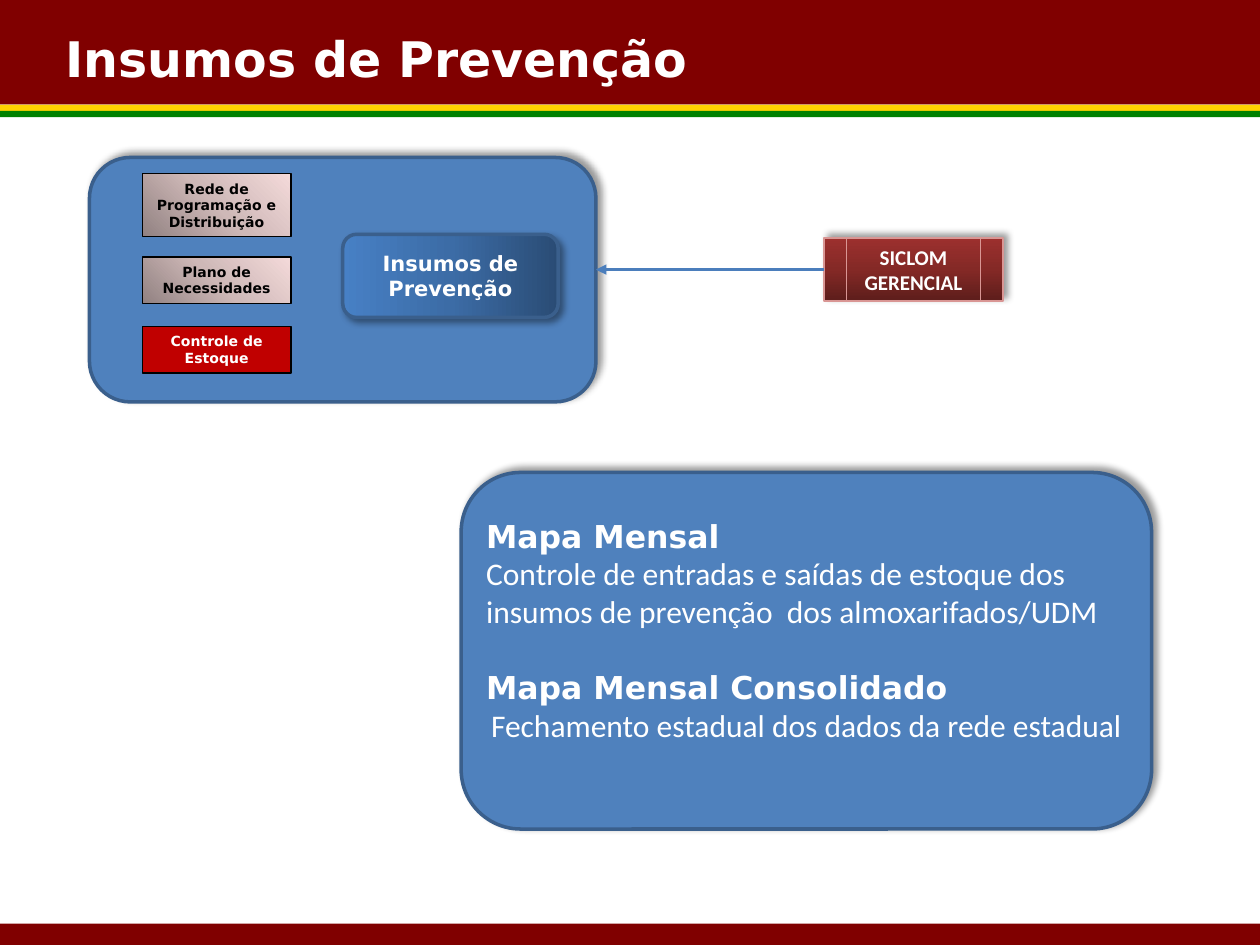
from dataclasses import dataclass

from lxml.etree import SubElement
from pptx import Presentation
from pptx.dml.color import RGBColor
from pptx.enum.shapes import MSO_CONNECTOR, MSO_SHAPE
from pptx.enum.text import MSO_ANCHOR, MSO_AUTO_SIZE, PP_ALIGN
from pptx.oxml.ns import qn
from pptx.util import Inches, Pt


@dataclass(frozen=True)
class Theme:
    maroon: str = "800000"
    yellow: str = "FFD200"
    green: str = "008000"
    blue: str = "4F81BD"
    blue_edge: str = "3A5F8C"
    arrow: str = "4B7EBC"
    red: str = "C00000"
    rose_edge: str = "D99694"
    black: str = "000000"
    white: str = "FFFFFF"
    blue_gradient: tuple = (180, "2A4C75", "3C6CA6", "4780C5")
    rose_gradient: tuple = (315, "918181", "CEB8B7", "F4DADA")
    red_gradient: tuple = (270, "5D1D1B", "842926", "9C302E")
    heading_font: str = "DejaVu Sans"
    body_font: str = "Calibri"
    title_size: int = 28
    body_size: int = 18
    label_size: int = 12
    small_size: int = 8


theme = Theme()


def add_box(kind, left, top, width, height, fill, edge=None, edge_width=2, shadow_angle=None):
    box = slide.shapes.add_shape(kind, Inches(left), Inches(top), Inches(width), Inches(height))
    box.shadow.inherit = False
    properties = box._element.spPr
    if isinstance(fill, tuple):
        box.fill.background()
        angle, *colors = fill
        gradient = properties.makeelement(qn("a:gradFill"), {"rotWithShape": "1"})
        stops = SubElement(gradient, qn("a:gsLst"))
        for position, color in zip((0, 50000, 100000), colors):
            stop = SubElement(stops, qn("a:gs"), pos=str(position))
            SubElement(stop, qn("a:srgbClr"), val=color)
        SubElement(gradient, qn("a:lin"), ang=str(angle * 60000), scaled="0")
        properties.replace(properties.find(qn("a:noFill")), gradient)
    else:
        box.fill.solid()
        box.fill.fore_color.rgb = RGBColor.from_string(fill)
    if edge:
        box.line.color.rgb = RGBColor.from_string(edge)
        box.line.width = Pt(edge_width)
    else:
        box.line.fill.background()
    if shadow_angle is not None:
        shadow = SubElement(
            properties.find(qn("a:effectLst")), qn("a:outerShdw"),
            blurRad=str(Pt(4)), dist=str(Pt(3)), dir=str(shadow_angle * 60000),
            algn="ctr", rotWithShape="0",
        )
        color = SubElement(shadow, qn("a:srgbClr"), val=theme.black)
        SubElement(color, qn("a:alpha"), val="40000")
    return box


def add_text(para, text, size, font, color, bold=True, align=PP_ALIGN.LEFT):
    para.alignment = align
    span = para.add_run()
    span.text = text
    span.font.size = Pt(size)
    span.font.name = font
    span.font.bold = bold
    span.font.color.rgb = RGBColor.from_string(color)


deck = Presentation()
deck.slide_width = Inches(10)
deck.slide_height = Inches(7.5)
slide = deck.slides.add_slide(deck.slide_layouts[5])

for top, height, color in (
    (0.83, 0.05, theme.yellow),
    (0, 0.83, theme.maroon),
    (0.88, 0.05, theme.green),
    (7.33, 0.17, theme.maroon),
):
    add_box(MSO_SHAPE.RECTANGLE, 0, top, 10, height, color)

title = slide.shapes.title
slide.shapes._spTree.append(title._element)
title.left, title.top = Inches(0.42), Inches(0.18)
title.width, title.height = Inches(8.33), Inches(0.57)
title.text_frame.vertical_anchor = MSO_ANCHOR.TOP
title.text_frame.auto_size = MSO_AUTO_SIZE.NONE
add_text(title.text_frame.paragraphs[0], "Insumos de Prevenção",
         theme.title_size, theme.heading_font, theme.white)

for left, top, width, height in ((0.71, 1.25, 4.02, 1.94), (3.66, 3.75, 5.48, 2.83)):
    add_box(MSO_SHAPE.ROUNDED_RECTANGLE, left, top, width, height,
            theme.blue, theme.blue_edge, shadow_angle=315)

supplies = add_box(MSO_SHAPE.ROUNDED_RECTANGLE, 2.72, 1.86, 1.71, 0.66,
                   theme.blue_gradient, theme.blue_edge, shadow_angle=45)
system = add_box(MSO_SHAPE.FLOWCHART_PREDEFINED_PROCESS, 6.54, 1.89, 1.42, 0.5,
                 theme.red_gradient, theme.rose_edge, 0.75, 315)
for box, label, font in (
    (supplies, "Insumos de Prevenção", theme.heading_font),
    (system, "SICLOM GERENCIAL", theme.body_font),
):
    box.text_frame.vertical_anchor = MSO_ANCHOR.MIDDLE
    add_text(box.text_frame.paragraphs[0], label, theme.label_size, font,
             theme.white, align=PP_ALIGN.CENTER)

for top, height, label, fill, color in (
    (2.59, 0.37, "Controle de Estoque", theme.red, theme.white),
    (2.04, 0.37, "Plano de Necessidades", theme.rose_gradient, theme.black),
    (1.38, 0.5, "Rede de Programação e Distribuição", theme.rose_gradient, theme.black),
):
    box = add_box(MSO_SHAPE.RECTANGLE, 1.13, top, 1.18, height, fill, theme.black, 0.75)
    box.text_frame.vertical_anchor = MSO_ANCHOR.TOP
    add_text(box.text_frame.paragraphs[0], label, theme.small_size,
             theme.heading_font, color, align=PP_ALIGN.CENTER)

arrow = slide.shapes.add_connector(
    MSO_CONNECTOR.STRAIGHT, Inches(6.54), Inches(2.14), Inches(4.73), Inches(2.14))
arrow.line.color.rgb = RGBColor.from_string(theme.arrow)
arrow.line.width = Pt(1.5)
arrow_properties = arrow._element.spPr
SubElement(arrow_properties.find(qn("a:ln")), qn("a:tailEnd"), type="triangle")
SubElement(arrow_properties, qn("a:effectLst"))

maps = slide.shapes.add_textbox(Inches(3.76), Inches(4.05), Inches(5.28), Inches(2.22))
maps.text_frame.word_wrap = True
for index, (heading, detail, align) in enumerate((
    ("Mapa Mensal",
     "Controle de entradas e saídas de estoque dos insumos de prevenção  dos almoxarifados/UDM",
     PP_ALIGN.LEFT),
    ("Mapa Mensal Consolidado",
     "Fechamento estadual dos dados da rede estadual",
     PP_ALIGN.CENTER),
)):
    para = maps.text_frame.add_paragraph() if index else maps.text_frame.paragraphs[0]
    if index:
        para.space_before = Pt(22)
    add_text(para, heading, theme.body_size, theme.heading_font, theme.white)
    add_text(maps.text_frame.add_paragraph(), detail, theme.body_size,
             theme.body_font, theme.white, False, align)

deck.save("out.pptx")
